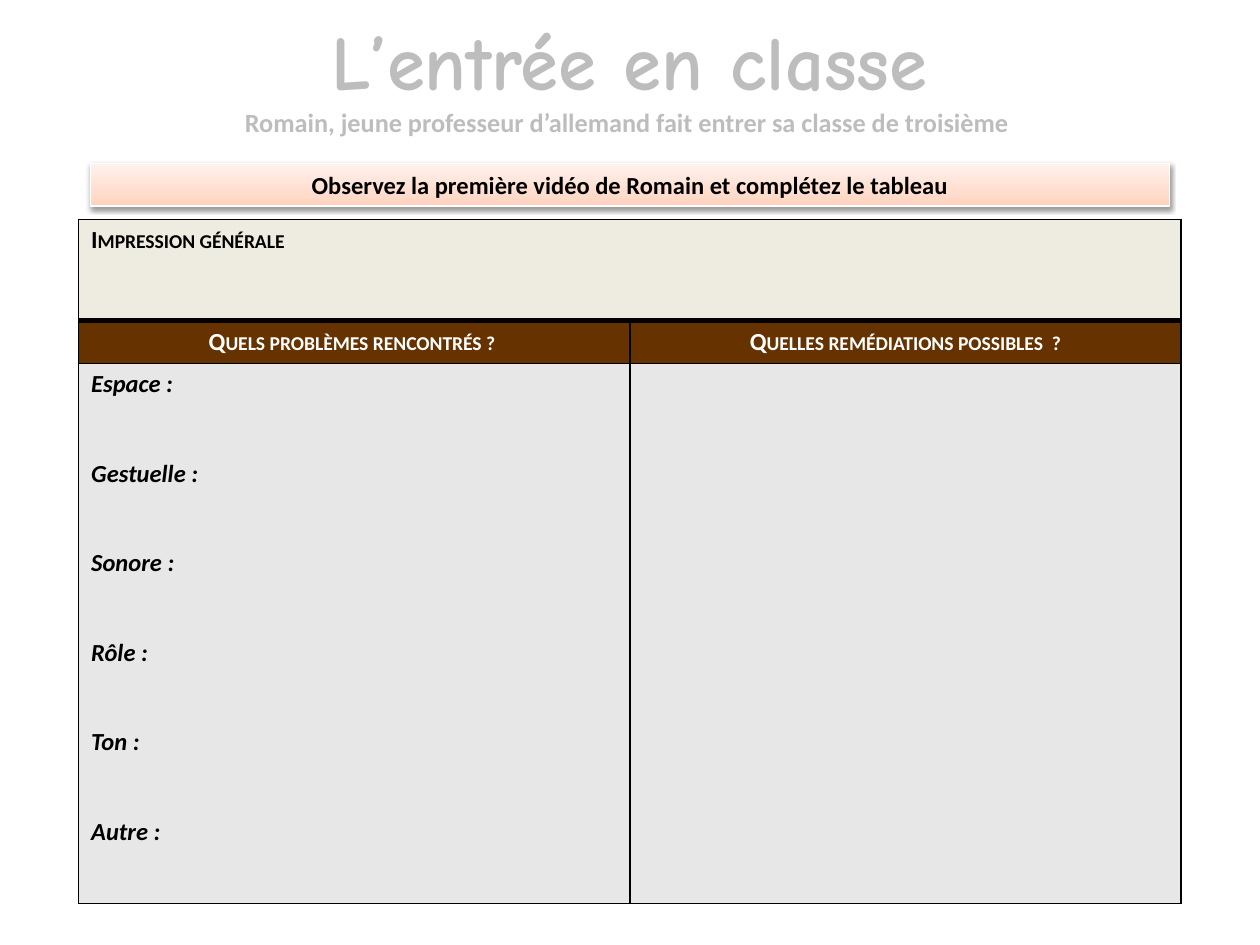
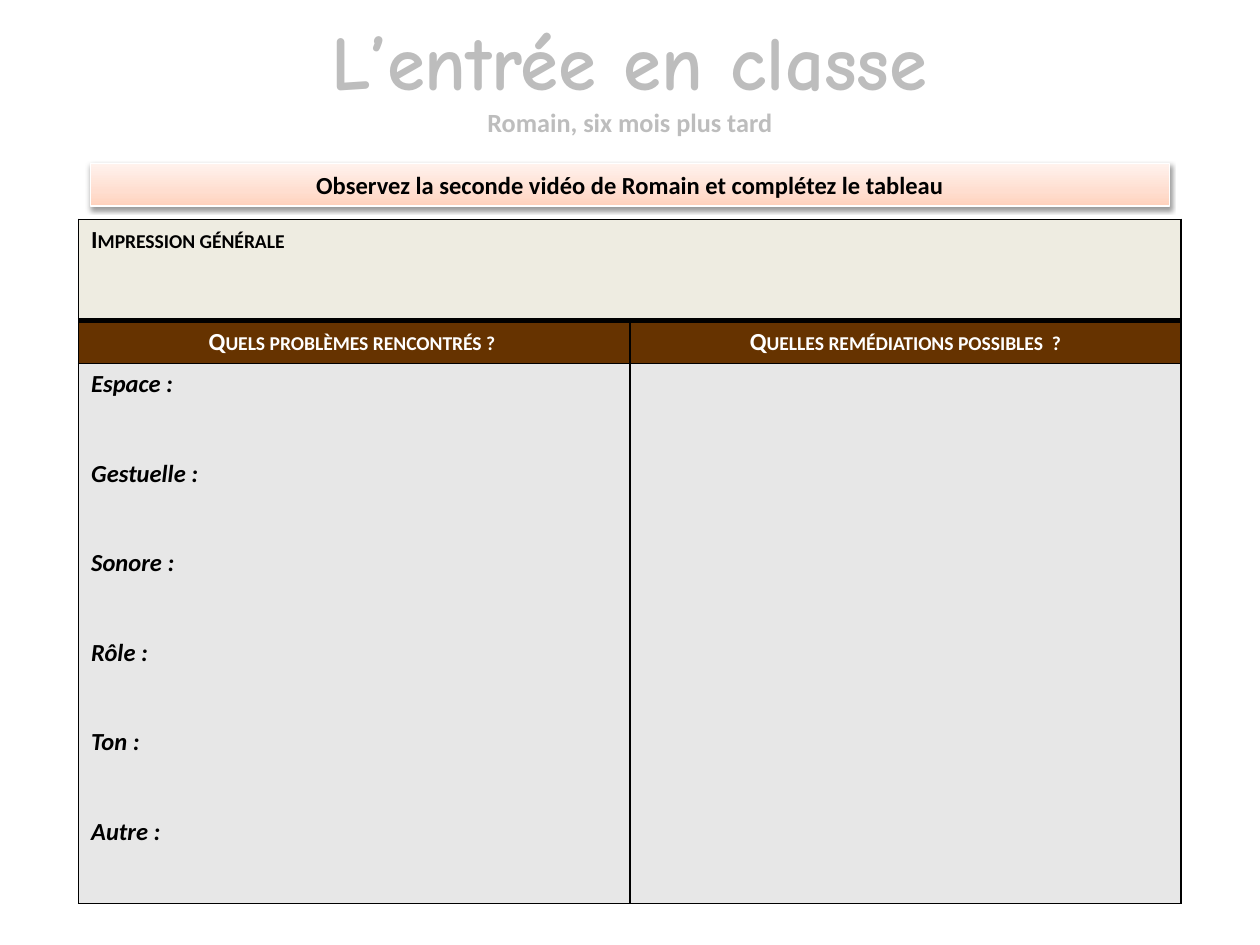
import copy

import lxml.etree
import pptx
import pptx.dml.color
import pptx.enum.shapes
import pptx.enum.text
import pptx.oxml.ns
import pptx.util

Pt = pptx.util.Pt
RGBColor = pptx.dml.color.RGBColor
qn = pptx.oxml.ns.qn
CENTER = pptx.enum.text.PP_ALIGN.CENTER
LEFT = pptx.enum.text.PP_ALIGN.LEFT

BLACK = RGBColor(0x00, 0x00, 0x00)
WHITE = RGBColor(0xFF, 0xFF, 0xFF)
TITLE_GREY = RGBColor(0xBD, 0xBD, 0xBD)
BEIGE = RGBColor(0xEE, 0xEC, 0xE1)
BROWN = RGBColor(0x66, 0x33, 0x00)
CELL_GREY = RGBColor(0xE7, 0xE7, 0xE7)
BANNER_STOPS = [
    (0, RGBColor(0xFF, 0xD2, 0xBD)),
    (0.35, RGBColor(0xFF, 0xDE, 0xD0)),
    (1, RGBColor(0xFF, 0xF2, 0xED)),
]

PAGE_WIDTH, PAGE_HEIGHT = 720, 540
ROW_HEIGHTS = [58, 24.3, 308.7]
COLUMN_WIDTH = 315
THIN, THICK = 1, 3
LABEL_GAP = 34.1

HEADING = "L’entrée en classe"
IMPRESSION = "Impression générale"
COLUMN_HEADS = ["Quels problèmes rencontrés ? ", "Quelles remédiations possibles  ?"]
ASPECTS = ["Espace :", "Gestuelle :", "Sonore :", "Rôle :", "Ton :", "Autre :"]
LESSONS = [
    ("Romain, jeune professeur d’allemand fait entrer sa classe de troisième ",
     "Observez la première vidéo de Romain et complétez le tableau"),
    ("Romain, six mois plus tard",
     "Observez la seconde vidéo de Romain et complétez le tableau"),
]


class Worksheet:
    """Holds the deck, its style and the current page."""

    def __init__(self):
        self.deck = pptx.Presentation()
        self.deck.slide_width = Pt(PAGE_WIDTH)
        self.deck.slide_height = Pt(PAGE_HEIGHT)
        self.page = None

    def add_page(self):
        self.page = self.deck.slides.add_slide(self.deck.slide_layouts[5])

    def format_para(self, para, color, size=14, name="Calibri", align=CENTER,
                    italic=False, small_caps=False):
        para.alignment = align
        for span in para.runs:
            font = span.font
            font.name, font.size, font.bold, font.italic = name, Pt(size), True, italic
            font.color.rgb = color
            if small_caps:
                span._r.get_or_add_rPr().set("cap", "small")

    def title(self, subtitle):
        box = self.page.shapes.title
        box.left, box.top, box.width, box.height = Pt(0), Pt(4.3), Pt(PAGE_WIDTH), Pt(78.5)
        frame = box.text_frame
        frame.text = f"{HEADING}\n{subtitle}"
        frame.word_wrap = True
        frame.auto_size = pptx.enum.text.MSO_AUTO_SIZE.NONE
        frame.vertical_anchor = pptx.enum.text.MSO_ANCHOR.TOP
        heading, subheading = frame.paragraphs
        self.format_para(heading, TITLE_GREY, 44, "Comic Neue")
        self.format_para(subheading, TITLE_GREY, 15)

    def banner(self, instruction):
        box = self.page.shapes.add_shape(
            pptx.enum.shapes.MSO_SHAPE.RECTANGLE, Pt(51.8), Pt(93.4), Pt(616.4), Pt(24.3))
        box.fill.gradient()
        box.fill.gradient_angle = 90
        stop_list = box._element.spPr.find(".//" + qn("a:gsLst"))
        stop_list.append(copy.deepcopy(stop_list[0]))
        for stop, (position, color) in zip(box.fill.gradient_stops, BANNER_STOPS):
            stop.position = position
            stop.color.rgb = color
        box.line.color.rgb = WHITE
        box.line.width = Pt(0.75)
        self.drop_shadow(box)
        box.text_frame.text = instruction
        box.text_frame.word_wrap = True
        self.format_para(box.text_frame.paragraphs[0], BLACK)

    def drop_shadow(self, box):
        box.shadow.inherit = False
        effects = box._element.spPr.find(qn("a:effectLst"))
        shadow = lxml.etree.SubElement(
            effects, qn("a:outerShdw"), blurRad=str(Pt(3.1)), dist=str(Pt(1.6)),
            dir="5400000", rotWithShape="0")
        color = lxml.etree.SubElement(shadow, qn("a:srgbClr"), val=str(BLACK))
        lxml.etree.SubElement(color, qn("a:alpha"), val="38000")

    def style_cell(self, cell, fill, top=THIN, bottom=THIN):
        properties = cell._tc.get_or_add_tcPr()
        for side, width in (("L", THIN), ("R", THIN), ("T", top), ("B", bottom)):
            line = lxml.etree.SubElement(properties, qn(f"a:ln{side}"), w=str(Pt(width)))
            solid = lxml.etree.SubElement(line, qn("a:solidFill"))
            lxml.etree.SubElement(solid, qn("a:srgbClr"), val=str(BLACK))
        cell.fill.solid()
        cell.fill.fore_color.rgb = fill

    def observation_table(self):
        table = self.page.shapes.add_table(
            len(ROW_HEIGHTS), 2, Pt(44.9), Pt(125.3),
            Pt(2 * COLUMN_WIDTH), Pt(sum(ROW_HEIGHTS))).table
        table.first_row = table.horz_banding = False
        for row, height in zip(table.rows, ROW_HEIGHTS):
            row.height = Pt(height)
        for index, head in enumerate(COLUMN_HEADS):
            table.columns[index].width = Pt(COLUMN_WIDTH)
            self.style_cell(table.cell(0, index), BEIGE, bottom=THICK)
            self.style_cell(table.cell(1, index), BROWN, top=THICK)
            self.style_cell(table.cell(2, index), CELL_GREY)
            table.cell(1, index).text = head
            self.format_para(table.cell(1, index).text_frame.paragraphs[0], WHITE,
                             small_caps=True)

        impression = table.cell(0, 0)
        impression.merge(table.cell(0, 1))
        impression.text = IMPRESSION
        self.format_para(impression.text_frame.paragraphs[0], BLACK, align=LEFT,
                         small_caps=True)

        aspects = table.cell(2, 0)
        aspects.text = "\n".join(ASPECTS)
        for index, para in enumerate(aspects.text_frame.paragraphs):
            self.format_para(para, BLACK, align=LEFT, italic=True)
            if index:
                para.space_before = Pt(LABEL_GAP)


def main():
    worksheet = Worksheet()
    for subtitle, instruction in LESSONS:
        worksheet.add_page()
        worksheet.title(subtitle)
        worksheet.observation_table()
        worksheet.banner(instruction)
    worksheet.deck.save("out.pptx")


if __name__ == "__main__":
    main()
